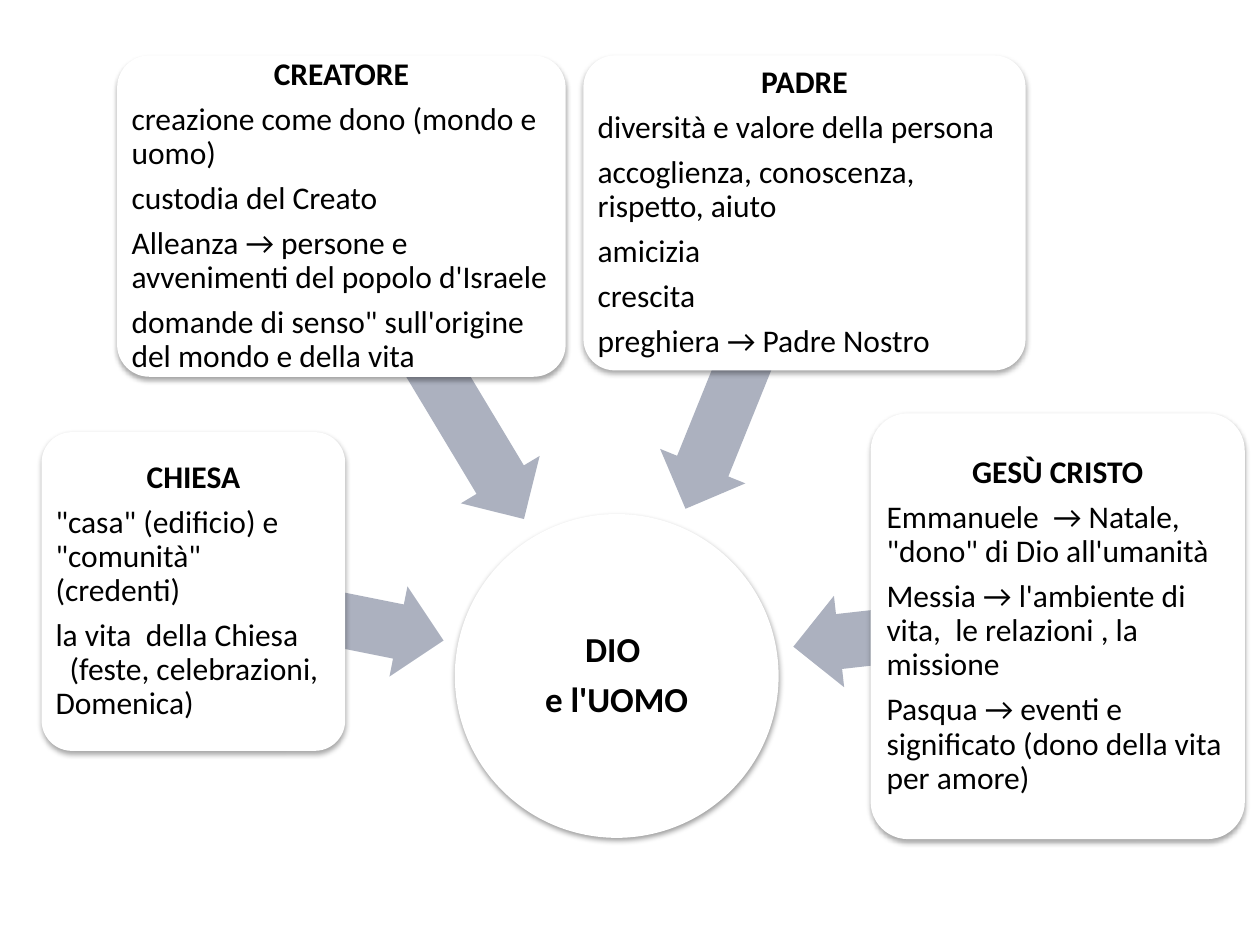
import pptx
import pptx.util
import pptx.dml.color
import pptx.enum.shapes
import pptx.enum.text
import pptx.oxml
import pptx.oxml.ns

Inches = pptx.util.Inches
Pt = pptx.util.Pt
Shape = pptx.enum.shapes.MSO_SHAPE
Align = pptx.enum.text.PP_ALIGN
RGBColor = pptx.dml.color.RGBColor

WHITE = RGBColor(0xFF, 0xFF, 0xFF)
BLACK = RGBColor(0x00, 0x00, 0x00)
GREY = RGBColor(0xAC, 0xB1, 0xBF)


def write(frame, lines, size=18, inset=0.04, bold=1, align=Align.LEFT):
    """Fill the frame; the first `bold` lines are bold and centred."""
    frame.word_wrap = True
    frame.vertical_anchor = pptx.enum.text.MSO_ANCHOR.MIDDLE
    frame.margin_left = frame.margin_right = Inches(inset)
    frame.margin_top = frame.margin_bottom = Inches(inset)
    for i, line in enumerate(lines):
        para = frame.paragraphs[0] if i == 0 else frame.add_paragraph()
        para.text = line
        para.alignment = Align.CENTER if i < bold else align
        para.line_spacing = 0.9
        para.space_after = Pt(0.35 * size)
        for run in para.runs:
            run.font.name = "Calibri"
            run.font.size = Pt(size)
            run.font.bold = i < bold
            run.font.color.rgb = BLACK


class Deck:
    """Holds the style and the current slide."""

    def __init__(self, slide):
        self.slide = slide

    def shape(self, kind, at, fill):
        item = self.slide.shapes.add_shape(kind, *map(Inches, at))
        item.fill.solid()
        item.fill.fore_color.rgb = fill
        item.line.fill.background()
        item.shadow.inherit = False
        return item

    def shade(self, item, alpha, dist):
        """Give the shape a soft shadow that falls straight down."""
        xml = (
            f'<a:outerShdw {pptx.oxml.ns.nsdecls("a")} blurRad="{Pt(3.1)}" '
            f'dist="{Pt(dist)}" dir="5400000" rotWithShape="0">'
            f'<a:srgbClr val="{BLACK}"><a:alpha val="{alpha * 1000}"/>'
            "</a:srgbClr></a:outerShdw>"
        )
        effects = item._element.spPr.find(pptx.oxml.ns.qn("a:effectLst"))
        effects.append(pptx.oxml.parse_xml(xml))

    def hub(self, at, lines):
        item = self.shape(Shape.OVAL, at, WHITE)
        self.shade(item, 38, 1.6)
        write(item.text_frame, lines, size=20, inset=0.01, bold=len(lines))

    def arrow(self, left, top, width, turn):
        item = self.shape(Shape.LEFT_ARROW, (left, top, width, 0.73), GREY)
        item.adjustments[0] = 0.6
        item.adjustments[1] = 0.5
        item.rotation = turn

    def card(self, at, lines):
        item = self.shape(Shape.ROUNDED_RECTANGLE, at, WHITE)
        item.adjustments[0] = 0.1
        self.shade(item, 35, 1.8)
        write(item.text_frame, lines)


# Each topic: arrow (left, top, width, turn), card box, card lines
TOPICS = [
    ((1.52, 4.52, 2.02, 191.3), (0.33, 3.43, 2.41, 2.53), [
        "CHIESA",
        '"casa" (edificio) e "comunità" (credenti)',
        "la vita  della Chiesa\v  (feste, celebrazioni, Domenica)",
    ]),
    ((2.03, 2.55, 2.81, 239), (0.93, 0.44, 3.56, 2.55), [
        "CREATORE",
        "creazione come dono (mondo e uomo)",
        "custodia del Creato",
        "Alleanza → persone e avvenimenti del popolo d'Israele",
        "domande di senso\" sull'origine del mondo e della vita",
    ]),
    ((4.65, 2.5, 2.53, 292), (4.63, 0.44, 3.51, 2.5), [
        "PADRE",
        "diversità e valore della persona",
        "accoglienza, conoscenza, rispetto, aiuto",
        "amicizia",
        "crescita",
        "preghiera → Padre Nostro",
    ]),
    ((6.29, 4.65, 2.11, 353.6), (6.91, 3.28, 2.97, 3.38), [
        "GESÙ CRISTO",
        "Emmanuele  → Natale, \"dono\" di Dio all'umanità",
        "Messia → l'ambiente di vita,  le relazioni , la missione",
        "Pasqua → eventi e significato (dono della vita per amore)",
    ]),
]


def main():
    show = pptx.Presentation()
    show.slide_width = Inches(10)
    show.slide_height = Inches(7.5)
    deck = Deck(show.slides.add_slide(show.slide_layouts[6]))
    deck.hub((3.61, 4.08, 2.57, 2.57), ["DIO ", "e l'UOMO"])
    for arrow, box, lines in TOPICS:
        deck.arrow(*arrow)
        deck.card(box, lines)
    show.save("out.pptx")


if __name__ == "__main__":
    main()
